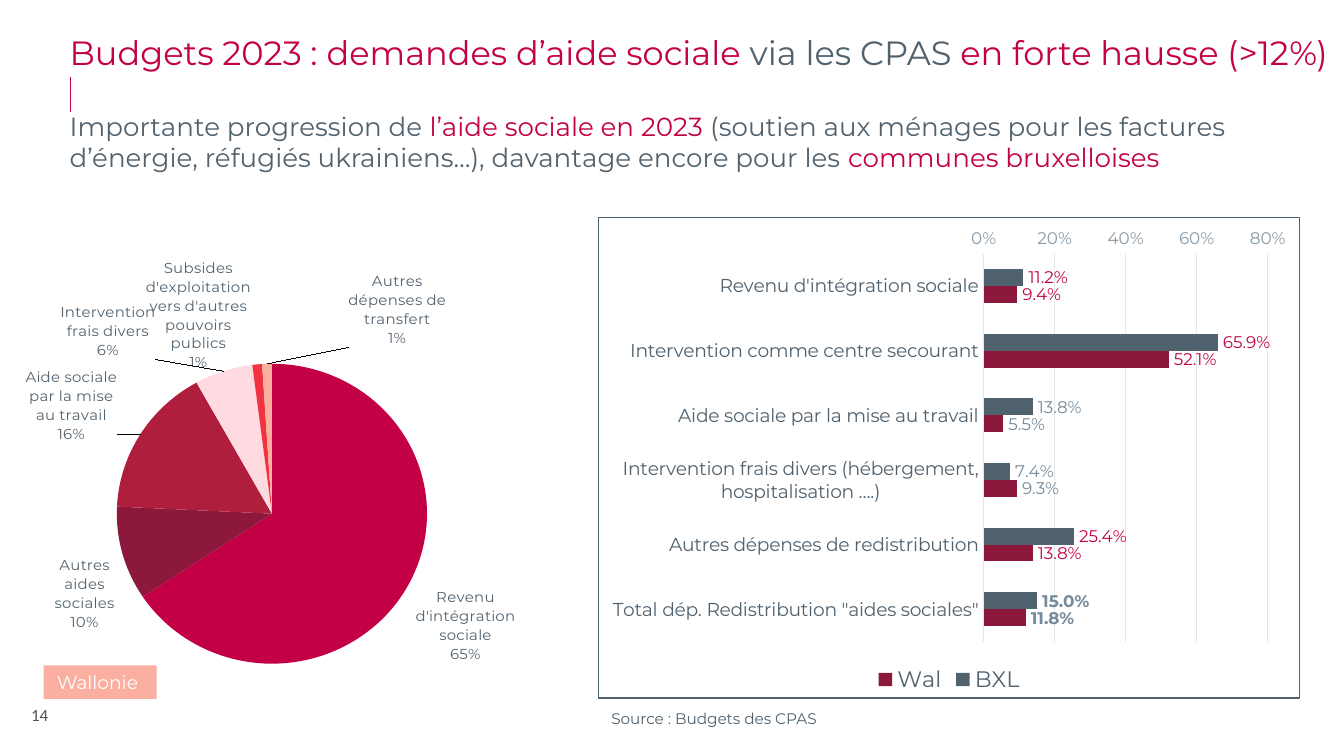
from dataclasses import dataclass
from typing import Any

from pptx import Presentation
from pptx import util as u
from pptx.chart import data as chart_data
from pptx.dml.color import RGBColor
from pptx.enum import chart as charts, shapes, text
from pptx.oxml import ns, parse_xml

SCALE = 4572  # 200 px to the inch
COLORS = {
    "red": "C30045", "crimson": "C30144", "slate": "51626F", "gray": "535353",
    "salmon": "FBAFA0", "white": "FFFFFF", "wine": "8C193C", "grid": "E3E8EB",
    "axis": "889AA8", "label": "758A9A",
}
PIE_COLORS = ["C30045", "8C193C", "AF1E3C", "FFDAE1", "F03241", "FAAFA0"]
NAMESPACES = ns.nsdecls("c", "a")


@dataclass
class Box:
    left: int
    top: int
    width: int
    height: int

    def emu(self) -> list[int]:
        return [px(v) for v in (self.left, self.top, self.width, self.height)]


@dataclass
class TextBlock:
    box: Box
    runs: list[tuple[str, str]]
    size: float
    frame: dict[str, Any]
    paragraph: dict[str, Any]
    font: str = "Montserrat"
    fill: str = ""


@dataclass
class BarSeries:
    name: str
    values: list[float]
    color: str


def px(length: int) -> int:
    return length * SCALE


def rgb(name: str) -> RGBColor:
    return RGBColor.from_string(COLORS[name])


def apply(target: Any, values: dict[str, Any]) -> None:
    for name, value in values.items():
        setattr(target, name, value)


def style_font(font: Any, size: float, color: str, name: str = "Montserrat") -> None:
    apply(font, {"size": u.Pt(size), "name": name})
    font.color.rgb = rgb(color)


def style_line(line: Any, color: str) -> None:
    line.color.rgb = rgb(color)
    line.width = u.Pt(0.75)


def draw_text(slide: Any, block: TextBlock) -> None:
    if block.fill:
        shape = slide.shapes.add_shape(shapes.MSO_SHAPE.RECTANGLE, *block.box.emu())
        shape.shadow.inherit = False
        shape.fill.solid()
        shape.fill.fore_color.rgb = rgb(block.fill)
        shape.line.fill.background()
    else:
        shape = slide.shapes.add_textbox(*block.box.emu())
    apply(shape.text_frame, {"word_wrap": True, **block.frame})
    paragraph = shape.text_frame.paragraphs[0]
    apply(paragraph, block.paragraph)
    for words, color in block.runs:
        run = paragraph.add_run()
        run.text = words
        style_font(run.font, block.size, color, block.font)


def layout_xml(values: dict[str, float], inner: bool = False) -> str:
    modes = '<c:layoutTarget val="inner"/><c:xMode val="edge"/><c:yMode val="edge"/>' if inner else ""
    sizes = "".join(f'<c:{key} val="{value}"/>' for key, value in values.items())
    return f"<c:layout {NAMESPACES}><c:manualLayout>{modes}{sizes}</c:manualLayout></c:layout>"


def add_chart(slide: Any, kind: Any, box: Box, data: Any) -> Any:
    chart = slide.shapes.add_chart(kind, *box.emu(), data).chart
    chart.has_title = False
    style_font(chart.font, 10, "slate")
    return chart


def draw_pie(slide: Any, box: Box, values: dict[str, int], moves: dict[int, tuple[float, float]]) -> None:
    data = chart_data.CategoryChartData(number_format='0"%"')
    data.categories = list(values)
    data.add_series("Series 1", list(values.values()))
    chart = add_chart(slide, charts.XL_CHART_TYPE.PIE, box, data)
    chart.has_legend = False
    series = chart.plots[0].series[0]
    for index, color in enumerate(PIE_COLORS):
        fill = series.points[index].format.fill
        fill.solid()
        fill.fore_color.rgb = RGBColor.from_string(color)

    labels = series.data_labels
    apply(labels, {
        "show_value": True, "show_category_name": True, "show_percentage": False,
        "number_format": '0"%"', "number_format_is_linked": False,
        "position": charts.XL_LABEL_POSITION.OUTSIDE_END,
    })
    style_font(labels.font, 8, "slate")
    element = labels._element
    for tag in ("separator", "showLeaderLines"):
        for old in element.findall(ns.qn(f"c:{tag}")):
            element.remove(old)
    separator = f"<c:separator {NAMESPACES}>\n</c:separator>"
    element.append(parse_xml(separator))
    element.append(parse_xml(f'<c:showLeaderLines {NAMESPACES} val="1"/>'))

    # Moved labels, joined to their slices by leader lines
    for position, (index, (x, y)) in enumerate(moves.items()):
        element.insert(position, parse_xml(
            f'<c:dLbl {NAMESPACES}><c:idx val="{index}"/>{layout_xml({"x": x, "y": y})}'
            '<c:numFmt formatCode="0&quot;%&quot;" sourceLinked="0"/>'
            '<c:dLblPos val="outEnd"/><c:showLegendKey val="0"/><c:showVal val="1"/>'
            '<c:showCatName val="1"/><c:showSerName val="0"/><c:showPercent val="0"/>'
            f'<c:showBubbleSize val="0"/>{separator}</c:dLbl>'))
    plot_area = chart._chartSpace.chart.plotArea
    for old in plot_area.findall(ns.qn("c:layout")):
        plot_area.remove(old)
    plot_area.insert(0, parse_xml(layout_xml({"x": 0.19, "y": 0.2, "w": 0.57, "h": 0.76}, True)))


def draw_bars(slide: Any, box: Box, categories: list[str], series_list: list[BarSeries]) -> None:
    data = chart_data.CategoryChartData(number_format="0.0%")
    data.categories = categories
    for item in series_list:
        data.add_series(item.name, item.values)
    chart = add_chart(slide, charts.XL_CHART_TYPE.BAR_CLUSTERED, box, data)
    apply(chart.plots[0], {"gap_width": 182, "vary_by_categories": False})

    # Axes and legend
    no_ticks = {"major_tick_mark": charts.XL_TICK_MARK.NONE, "minor_tick_mark": charts.XL_TICK_MARK.NONE}
    category_axis, value_axis = chart.category_axis, chart.value_axis
    apply(category_axis, {**no_ticks, "reverse_order": True})
    apply(value_axis, {**no_ticks, "has_major_gridlines": True})
    style_font(category_axis.tick_labels.font, 10, "slate")
    style_font(value_axis.tick_labels.font, 9, "axis")
    apply(value_axis.tick_labels, {"number_format": "0%", "number_format_is_linked": False})
    style_line(category_axis.format.line, "grid")
    style_line(value_axis.major_gridlines.format.line, "grid")
    value_axis.format.line.fill.background()
    chart.has_legend = True
    apply(chart.legend, {"position": charts.XL_LEGEND_POSITION.BOTTOM, "include_in_layout": False})
    style_font(chart.legend.font, 12, "slate")

    # Bars and value labels
    outside = charts.XL_LABEL_POSITION.OUTSIDE_END
    for series, item in zip(chart.plots[0].series, series_list):
        series.format.fill.solid()
        series.format.fill.fore_color.rgb = rgb(item.color)
        apply(series.data_labels, {
            "show_value": True, "position": outside,
            "number_format": "0.0%", "number_format_is_linked": False})
        style_font(series.data_labels.font, 9, "label")
        for index in (0, 1, 4, 5):
            is_total = index == 5
            label = series.points[index].data_label
            style_font(label.font, 9, "label" if is_total else "red")
            label.font.bold = is_total
            label.position = outside

    # Frame around the chart
    chart._chartSpace.chart.addnext(parse_xml(
        f'<c:spPr {NAMESPACES}><a:noFill/><a:ln w="9525"><a:solidFill>'
        f'<a:srgbClr val="{COLORS["slate"]}"/></a:solidFill></a:ln></c:spPr>'))


TEXTS = [
    TextBlock(Box(24, 1040, 70, 46), [("14", "gray")], 9.1,
              dict.fromkeys(["margin_left", "margin_right", "margin_top", "margin_bottom"], px(8)),
              {"alignment": text.PP_ALIGN.CENTER}, font="Calibri"),
    TextBlock(Box(84, 164, 1812, 144), [
        ("Importante progression de ", "slate"), ("l’aide sociale en 2023 ", "crimson"),
        ("(soutien aux ménages pour les factures d’énergie, réfugiés ukrainiens…), davantage encore pour les ",
         "slate"), ("communes bruxelloises", "crimson")], 14, {"margin_top": 0}, {}),
    TextBlock(Box(84, 38, 1944, 110), [
        ("Budgets 2023 : ", "red"), ("demandes d’aide sociale ", "crimson"),
        ("via les CPAS ", "slate"), ("en forte hausse (>12%)", "crimson")], 18, {}, {}),
    TextBlock(Box(65, 990, 168, 50), [("Wallonie", "white")], 10,
              {"vertical_anchor": text.MSO_ANCHOR.MIDDLE},
              {"alignment": text.PP_ALIGN.LEFT}, fill="salmon"),
    TextBlock(Box(890, 1032, 534, 50), [("Source : Budgets des CPAS", "slate")], 8.2,
              {}, {"line_spacing": 1.5}),
]
PIE_VALUES = {
    "Revenu d'intégration sociale": 65, "Autres aides sociales": 10,
    "Aide sociale par la mise au travail": 16, "Intervention frais divers": 6,
    "Subsides d'exploitation vers d'autres pouvoirs publics": 1, "Autres dépenses de transfert": 1,
}
LABEL_MOVES = {2: (-0.03, 0.03), 3: (-0.12, -0.01), 4: (-0.01, 0.02), 5: (0.24, -0.02)}
BAR_CATEGORIES = [
    "Revenu d'intégration sociale", "Intervention comme centre secourant",
    "Aide sociale par la mise au travail", "Intervention frais divers (hébergement, hospitalisation ….)",
    "Autres dépenses de redistribution", 'Total dép. Redistribution "aides sociales"',
]
BAR_SERIES = [
    BarSeries("BXL", [0.112, 0.659, 0.138, 0.074, 0.254, 0.15], "slate"),
    BarSeries("Wal", [0.094, 0.521, 0.055, 0.093, 0.138, 0.118], "wine"),
]


def main() -> None:
    presentation = Presentation()
    apply(presentation, {"slide_width": px(2000), "slide_height": px(1125)})
    slide = presentation.slides.add_slide(presentation.slide_layouts[6])

    # Rule under the title
    rule = slide.shapes.add_connector(shapes.MSO_CONNECTOR.STRAIGHT, px(105), px(114), px(105), px(166))
    style_line(rule.line, "red")
    rule._element.spPr.append(parse_xml(f"<a:effectLst {NAMESPACES}/>"))

    # Charts, then texts
    draw_pie(slide, Box(20, 362, 810, 678), PIE_VALUES, LABEL_MOVES)
    draw_bars(slide, Box(890, 323, 1045, 717), BAR_CATEGORIES, BAR_SERIES)
    for block in TEXTS:
        draw_text(slide, block)
    presentation.save("out.pptx")


if __name__ == "__main__":
    main()
